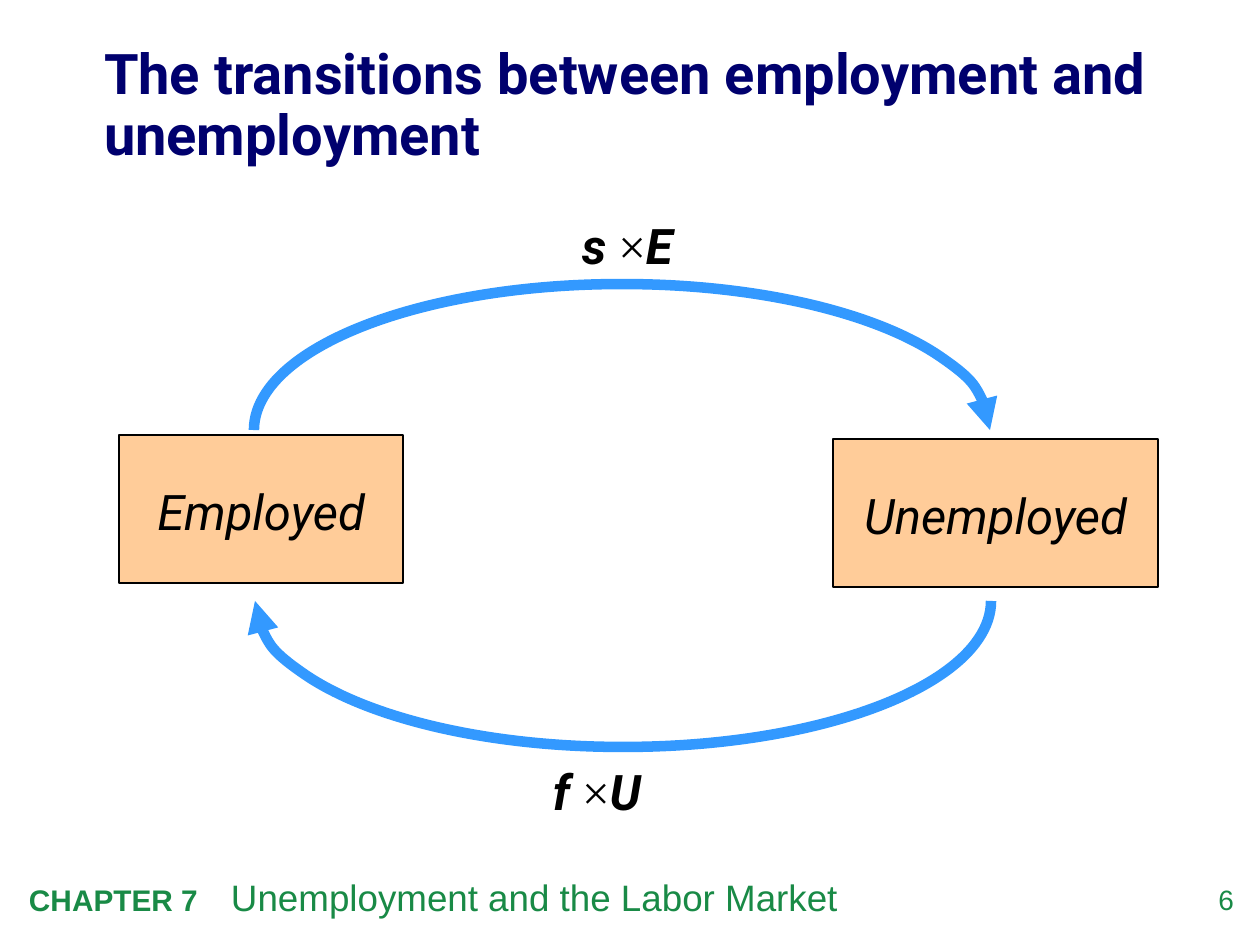
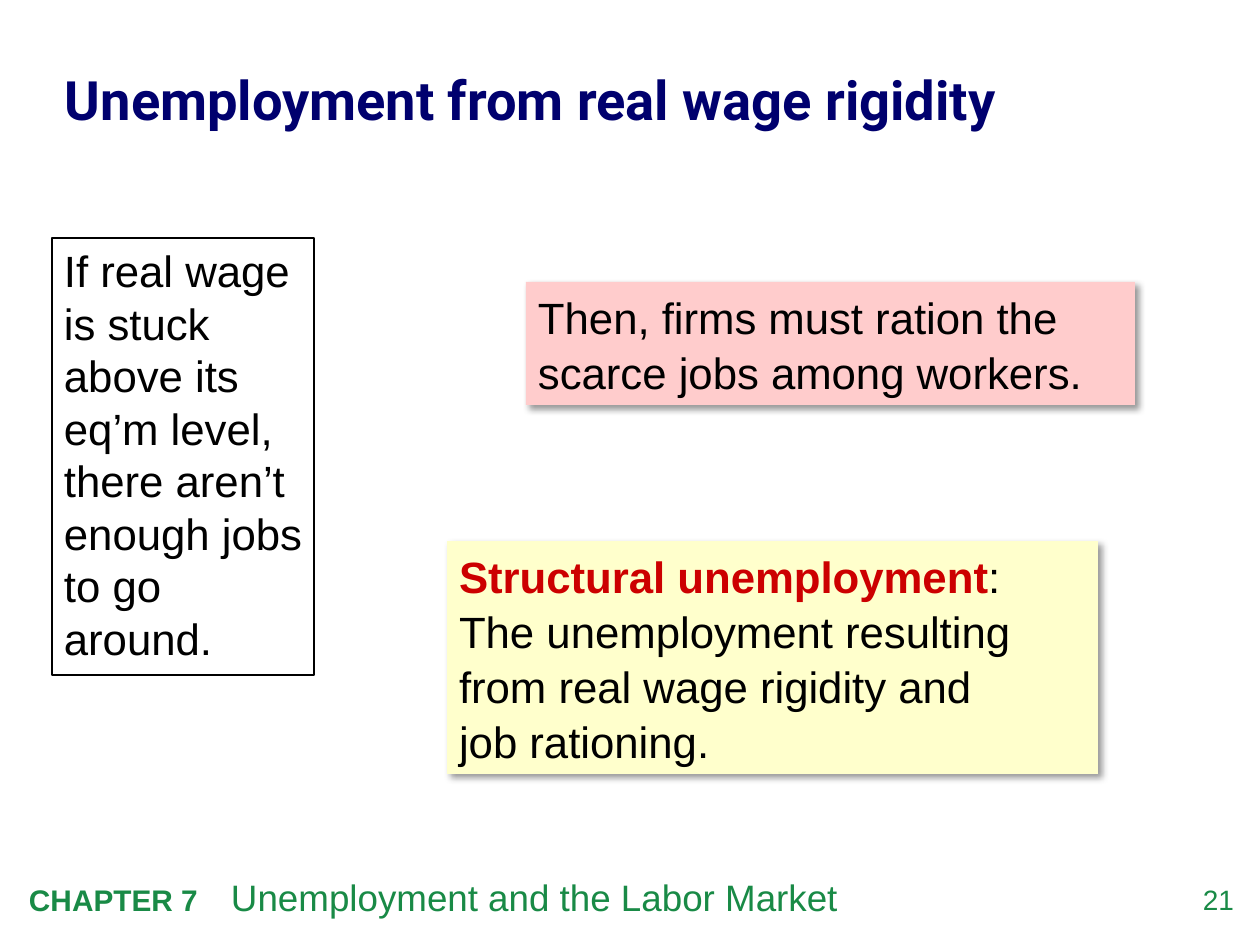
from lxml.etree import SubElement
from pptx import Presentation
from pptx.dml.color import RGBColor
from pptx.enum.shapes import MSO_SHAPE
from pptx.enum.text import MSO_ANCHOR, MSO_AUTO_SIZE, PP_ALIGN
from pptx.oxml.ns import qn
from pptx.util import Emu, Pt

EMU_PER_PX = 914400 / 126
NAVY = RGBColor(0x00, 0x00, 0x6E)
GREEN = RGBColor(0x19, 0x8A, 0x46)
BLACK = RGBColor(0x00, 0x00, 0x00)
WHITE = RGBColor(0xFF, 0xFF, 0xFF)
RED = RGBColor(0xCC, 0x00, 0x00)
BLUE = RGBColor(0x33, 0x99, 0xFF)
ORANGE = RGBColor(0xFF, 0xCC, 0x99)
PINK = RGBColor(0xFF, 0xCC, 0xCC)
YELLOW = RGBColor(0xFF, 0xFF, 0xCC)
HEAD_FONT, BODY_FONT, SIGN_FONT = "Roboto", "Arial", "Times New Roman"


def px(n):
    """Turn pixels into EMU."""
    return Emu(round(n * EMU_PER_PX))


def place(sp, box):
    """Move a shape to a (left, top, width, height) box in px."""
    sp.left, sp.top, sp.width, sp.height = map(px, box)


def set_frame(tf, inset_x=12, inset_y=6, anchor=MSO_ANCHOR.TOP):
    """Set wrapping, insets and anchor, and return the first paragraph."""
    tf.word_wrap = True
    tf.auto_size = MSO_AUTO_SIZE.NONE
    tf.vertical_anchor = anchor
    tf.margin_left = tf.margin_right = px(inset_x)
    tf.margin_top = tf.margin_bottom = px(inset_y)
    return tf.paragraphs[0]


def style(p, name, size, color, spacing=1.0, align=PP_ALIGN.LEFT):
    """Format a whole paragraph."""
    p.alignment, p.line_spacing = align, spacing
    p.font.name, p.font.size = name, Pt(size)
    p.font.color.rgb = color


def add_run(p, text, bold=None):
    """Append a run and return its font."""
    r = p.add_run()
    r.text = text
    r.font.bold = bold
    return r.font


def add_rect(s, box, fill, line_width=0):
    """Draw a filled rectangle with an optional black outline."""
    sp = s.shapes.add_shape(MSO_SHAPE.RECTANGLE, *map(px, box))
    sp.shadow.inherit = False
    sp.fill.solid()
    sp.fill.fore_color.rgb = fill
    if line_width:
        sp.line.color.rgb = BLACK
        sp.line.width = Pt(line_width)
    else:
        sp.line.fill.background()
    return sp


def add_shadow(sp):
    """Give a shape a soft shadow to the lower right."""
    effects = sp.element.spPr.find(qn("a:effectLst"))
    shadow = SubElement(effects, qn("a:outerShdw"), blurRad=str(Pt(4)),
                        dist=str(Pt(3)), dir="2700000", algn="tl", rotWithShape="0")
    color = SubElement(shadow, qn("a:srgbClr"), val=str(BLACK))
    SubElement(color, qn("a:alpha"), val="40000")


def add_footer(s, number):
    """Write the chapter line and the slide number."""
    tf = s.shapes.add_textbox(*map(px, (17, 869, 1031, 57))).text_frame
    p = set_frame(tf)
    tabs = SubElement(p._p.get_or_add_pPr(), qn("a:tabLst"))
    SubElement(tabs, qn("a:tab"), pos=str(px(202)), algn="l")
    style(p, BODY_FONT, 21, GREEN)
    add_run(p, "CHAPTER 7", True).size = Pt(17)
    add_run(p, "\tUnemployment and the Labor Market")
    tf = s.shapes.add_textbox(*map(px, (1164, 883, 70, 40))).text_frame
    p = set_frame(tf, 0, 0)
    p.text = str(number)
    style(p, BODY_FONT, 16, GREEN, align=PP_ALIGN.RIGHT)


def add_slide(prs, title, box, size, spacing, number):
    """Add a slide with its title and footer."""
    s = prs.slides.add_slide(prs.slide_layouts[5])
    place(s.shapes.title, box)
    p = set_frame(s.shapes.title.text_frame, 0, 0, MSO_ANCHOR.MIDDLE)
    p.text = title
    style(p, HEAD_FONT, size, NAVY, spacing)
    p.font.bold = True
    add_footer(s, number)
    return s


def add_state(s, box, name):
    """Draw a labour market state."""
    p = set_frame(add_rect(s, box, ORANGE, 1).text_frame, 12, 35)
    p.text = name
    style(p, HEAD_FONT, 28, BLACK, 1.2, PP_ALIGN.CENTER)
    p.font.italic = True


def add_flow(s, box, rotation, label_at, rate, stock):
    """Draw a curved arrow filling the box, with its product label."""
    left, top, width, height = box
    shift = (width - height) / 2
    sp = s.shapes.add_shape(MSO_SHAPE.LEFT_BRACKET, 0, 0, 0, 0)
    place(sp, (left + shift, top - shift, height, width))
    sp.adjustments[0] = 2.51
    sp.rotation = rotation
    sp.element.spPr.find(qn("a:xfrm")).set("flipV", "1")
    sp.shadow.inherit = False
    sp.fill.background()
    sp.line.color.rgb = BLUE
    sp.line.width = Pt(6)
    SubElement(sp.element.spPr.find(qn("a:ln")), qn("a:headEnd"), type="triangle")
    p = set_frame(s.shapes.add_textbox(*map(px, (*label_at, 136, 72))).text_frame)
    style(p, HEAD_FONT, 28, BLACK)
    for text in (f"{rate} ", "×", stock):
        font = add_run(p, text, text != "×")
        font.italic = text != "×"
        if text == "×":
            font.name = SIGN_FONT


def add_note(s, box, fill, lines, spacing, term="", line_width=0):
    """Draw a text panel, opened by an optional red term."""
    sp = add_rect(s, box, fill, line_width)
    if not line_width:
        add_shadow(sp)
    p = set_frame(sp.text_frame)
    style(p, BODY_FONT, 25, BLACK, spacing)
    if term:
        add_run(p, term, True).color.rgb = RED
    for i, line in enumerate(lines):
        if i:
            p.add_line_break()
        add_run(p, line)


def build_transitions(prs):
    """Build the slide on flows between the two states."""
    s = add_slide(prs, "The transitions between employment and unemployment",
                  (104, 32, 1061, 150), 32, 0.9, 6)
    add_state(s, (119, 435, 284, 148), "Employed")
    add_state(s, (833, 439, 325, 148), "Unemployed")
    add_flow(s, (254, 284, 736, 146), 90, (570, 209), "s", "E")
    add_flow(s, (255, 601, 736, 146), 270, (541, 755), "f", "U")


def build_rigidity(prs):
    """Build the slide on real wage rigidity."""
    s = add_slide(prs, "Unemployment from real wage rigidity",
                  (65, 32, 1137, 130), 31, 1.05, 21)
    add_note(s, (526, 282, 609, 123), PINK,
             ["Then, firms must ration the scarce jobs among workers."], 1.05)
    add_note(s, (447, 541, 651, 233), YELLOW,
             [":", "The unemployment resulting from real wage rigidity and",
              "job rationing."], 1.05, "Structural unemployment")
    add_note(s, (52, 238, 262, 437), WHITE,
             ["If real wage is stuck above its eq’m level, there aren’t "
              "enough jobs to go around."], 1.0, line_width=0.75)


def main():
    """Build and save the presentation."""
    prs = Presentation()
    prs.slide_width, prs.slide_height = px(1260), px(945)
    build_transitions(prs)
    build_rigidity(prs)
    prs.save("out.pptx")


if __name__ == "__main__":
    main()
